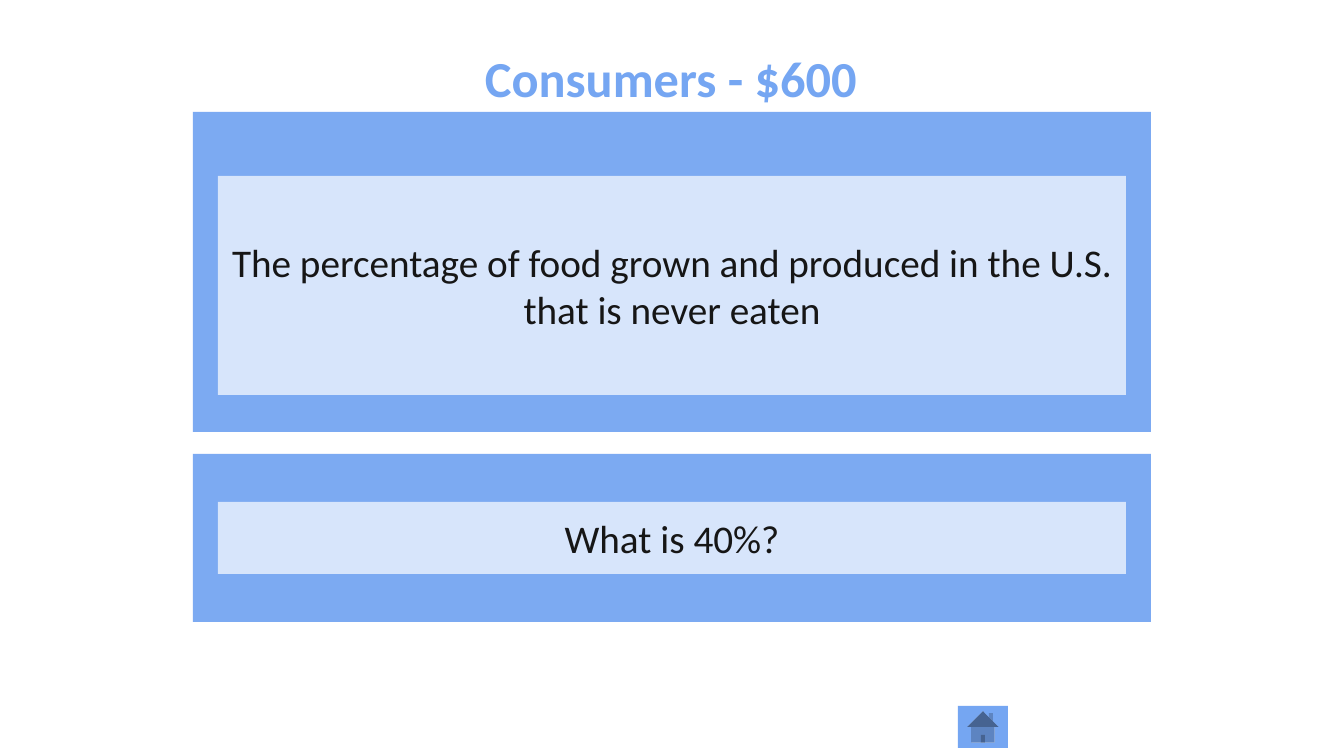
from dataclasses import dataclass

import lxml.etree
import pptx
import pptx.dml.color
import pptx.enum.shapes
import pptx.enum.text
import pptx.oxml.ns
import pptx.util

BLUE = pptx.dml.color.RGBColor(0x75, 0xA6, 0xF2)
WHITE = pptx.dml.color.RGBColor(0xFF, 0xFF, 0xFF)
INK = pptx.dml.color.RGBColor(0x16, 0x16, 0x16)

SHAPE = pptx.enum.shapes.MSO_SHAPE
ANCHOR = pptx.enum.text.MSO_ANCHOR
EMU_PER_PX = 914400 / 100.8
PANEL_LEFT, PANEL_WIDTH, PANEL_MARGIN = 193, 958, 25


@dataclass
class Card:
    text: str
    top: int
    height: int
    inner_top: int
    inner_height: int


CARDS = [
    Card("What is 40%?", 454, 168, 502, 72),
    Card("The percentage of food grown and produced in the U.S. that is never eaten",
         112, 320, 176, 219),
]


def px(n: int) -> pptx.util.Emu:
    return pptx.util.Emu(round(n * EMU_PER_PX))


def add_box(slide, kind, left: int, top: int, width: int, height: int,
            color: pptx.dml.color.RGBColor, opacity: int = 100):
    sp = slide.shapes.add_shape(kind, px(left), px(top), px(width), px(height))
    sp.shadow.inherit = False
    sp.line.fill.background()
    sp.fill.solid()
    sp.fill.fore_color.rgb = color
    if opacity < 100:
        qn = pptx.oxml.ns.qn
        clr = sp.fill._xPr.find(qn("a:solidFill")).find(qn("a:srgbClr"))
        lxml.etree.SubElement(clr, qn("a:alpha"), val=str(opacity * 1000))
    return sp


def write_text(sp, text: str, size: int, color: pptx.dml.color.RGBColor,
               bold: bool, anchor) -> None:
    tf = sp.text_frame
    tf.word_wrap = True
    tf.auto_size = pptx.enum.text.MSO_AUTO_SIZE.NONE
    tf.vertical_anchor = anchor
    p = tf.paragraphs[0]
    p.alignment = pptx.enum.text.PP_ALIGN.CENTER
    p.space_before = pptx.util.Pt(0)
    r = p.add_run()
    r.text = text
    r.font.color.rgb = color
    formats = {"name": "Calibri", "size": pptx.util.Pt(size), "bold": bold}
    for name, value in formats.items():
        setattr(r.font, name, value)


def add_title(slide, text: str) -> None:
    title = slide.shapes.title
    place = {"left": 24, "top": 47, "width": 1294, "height": 94}
    for name, value in place.items():
        setattr(title, name, px(value))
    for side in ("left", "top", "right", "bottom"):
        setattr(title.text_frame, f"margin_{side}", 0)
    write_text(title, text, 36, BLUE, True, ANCHOR.TOP)


def add_card(slide, card: Card) -> None:
    add_box(slide, SHAPE.RECTANGLE, PANEL_LEFT, card.top, PANEL_WIDTH,
            card.height, BLUE, 95)
    inner = add_box(slide, SHAPE.RECTANGLE, PANEL_LEFT + PANEL_MARGIN,
                    card.inner_top, PANEL_WIDTH - 2 * PANEL_MARGIN,
                    card.inner_height, WHITE, 70)
    write_text(inner, card.text, 28, INK, False, ANCHOR.MIDDLE)


def main() -> None:
    prs = pptx.Presentation()
    prs.slide_width, prs.slide_height = px(1344), px(756)
    slide = prs.slides.add_slide(prs.slide_layouts.get_by_name("Title Only"))
    add_title(slide, "Consumers - $600")
    for card in CARDS:
        add_card(slide, card)
    add_box(slide, SHAPE.ACTION_BUTTON_HOME, 958, 706, 50, 42, BLUE)
    prs.save("out.pptx")


if __name__ == "__main__":
    main()
